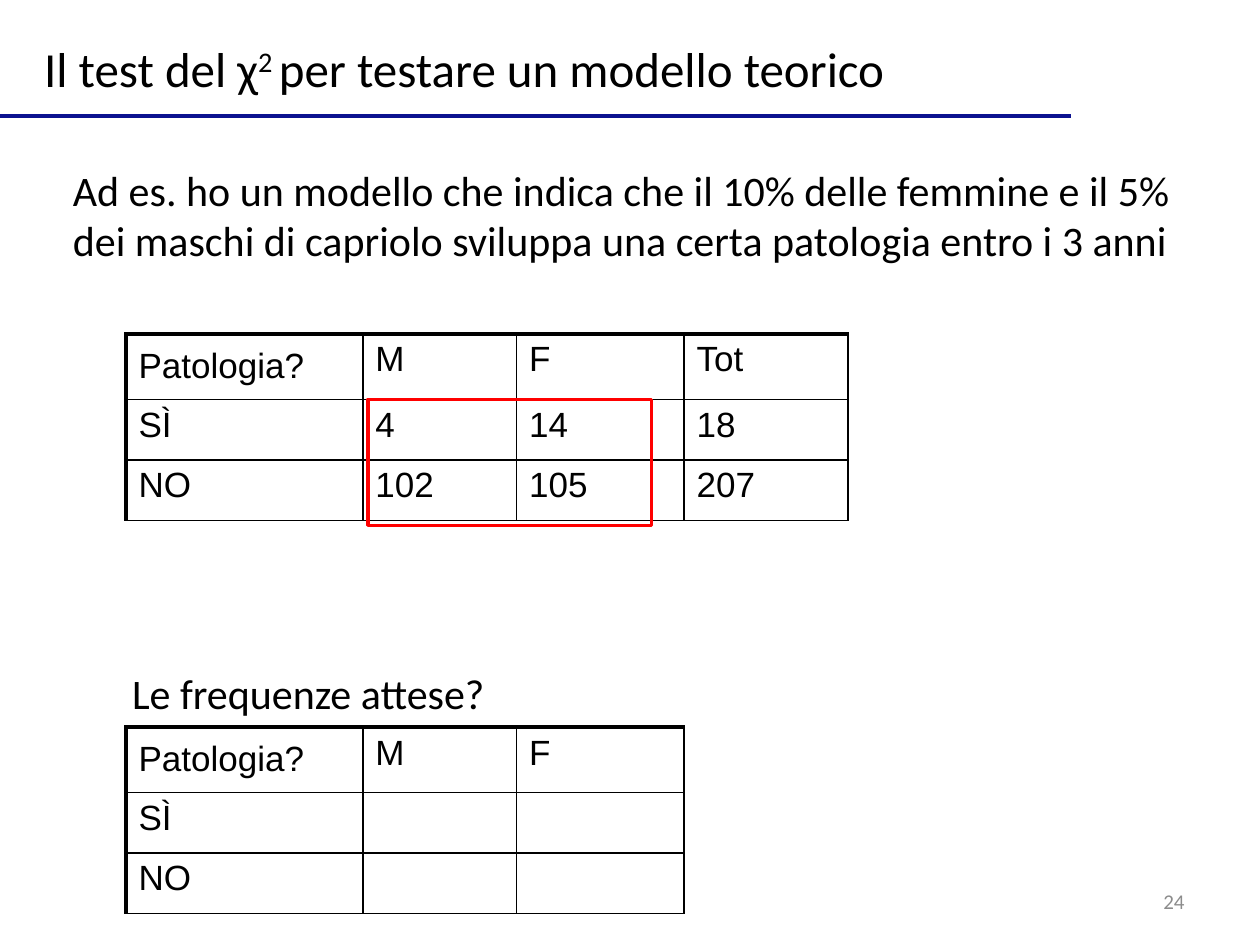
"""Build a slide on testing a theoretical model with the chi-squared test."""
from dataclasses import dataclass

from lxml import etree
from pptx import Presentation
from pptx.dml.color import RGBColor
from pptx.enum.shapes import MSO_CONNECTOR, MSO_SHAPE
from pptx.enum.text import MSO_ANCHOR, MSO_AUTO_SIZE, PP_ALIGN
from pptx.oxml.ns import qn
from pptx.util import Inches, Pt

MIDDLE, TOP = MSO_ANCHOR.MIDDLE, MSO_ANCHOR.TOP
LEFT, RIGHT = PP_ALIGN.LEFT, PP_ALIGN.RIGHT
GROW = MSO_AUTO_SIZE.SHAPE_TO_FIT_TEXT
STRAIGHT, RECTANGLE = MSO_CONNECTOR.STRAIGHT, MSO_SHAPE.RECTANGLE
TITLE_ONLY = 5
BLACK, WHITE, GREY, NAVY, RED = "000000", "FFFFFF", "8C8C8C", "0C1290", "FF0000"
THICK, THIN = 2.25, 1
COLUMN_WIDTHS = (1.88, 1.22, 1.33, 1.3)
ROW_HEIGHTS = (0.52, 0.48, 0.48)
TABLE_LEFT = 1


@dataclass
class Label:
    """A text box with its place in inches and its look."""

    text: str
    place: tuple[float, float, float, float]
    size: float = 24
    color: str = BLACK
    align: PP_ALIGN = LEFT


@dataclass
class Frequencies:
    """A contingency table with its top edge in inches."""

    top: float
    rows: list[list[str]]


LABELS = [
    Label("24", (7.17, 6.95, 2.33, 0.4), 12, GREY, RIGHT),
    Label("Ad es. ho un modello che indica che il 10% delle femmine e il 5%\n"
          "dei maschi di capriolo sviluppa una certa patologia entro i 3 anni",
          (0.48, 1.25, 8.98, 0.91)),
    Label("Le frequenze attese?", (0.95, 5.25, 3.04, 0.5)),
]
OBSERVED = Frequencies(2.65, [["Patologia?", "M", "F", "Tot"],
                              ["SÌ", "4", "14", "18"],
                              ["NO", "102", "105", "207"]])
EXPECTED = Frequencies(5.77, [["Patologia?", "M", "F"], ["SÌ", "", ""], ["NO", "", ""]])


def rgb(color: str) -> RGBColor:
    """Turn a hex string into a colour."""
    return RGBColor.from_string(color)


def style_span(span, size: float, color: str = BLACK, font: str = "Calibri") -> None:
    """Set the font of one run."""
    span.font.name, span.font.size = font, Pt(size)
    span.font.color.rgb = rgb(color)


def fit_frame(frame) -> None:
    """Centre a text frame vertically and size its box to the unwrapped text."""
    frame.word_wrap, frame.auto_size = False, GROW
    frame.vertical_anchor = MIDDLE


def add_title(page) -> None:
    """Place the title with its superscript."""
    box = page.shapes.title
    box.left, box.top, box.width, box.height = map(Inches, (0.25, 0.25, 6.97, 0.57))
    fit_frame(box.text_frame)
    para = box.text_frame.paragraphs[0]
    para.alignment = LEFT
    for text, baseline in (("Il test del χ", 0), ("2 ", 30000),
                           ("per testare un modello teorico", 0)):
        span = para.add_run()
        span.text = text
        style_span(span, 28)
        span.font._element.set("baseline", str(baseline))


def add_label(page, label: Label) -> None:
    """Draw a text box."""
    box = page.shapes.add_textbox(*map(Inches, label.place))
    frame = box.text_frame
    frame.text = label.text
    fit_frame(frame)
    if label.align == RIGHT:
        frame.word_wrap, frame.auto_size = True, MSO_AUTO_SIZE.NONE
    for para in frame.paragraphs:
        para.alignment = label.align
        style_span(para.runs[0], label.size, label.color)


def add_rule(page) -> None:
    """Draw the line under the title."""
    rule = page.shapes.add_connector(STRAIGHT, 0, Inches(0.92), Inches(8.5), Inches(0.92))
    rule.line.color.rgb, rule.line.width = rgb(NAVY), Pt(2)
    etree.SubElement(rule._element.spPr, qn("a:effectLst"))


def set_borders(cell, row: int, column: int) -> None:
    """Border a cell, thick on the outer left and top of the table."""
    left = THICK if column == 0 else THIN
    top = THICK if row == 0 else THIN
    properties = cell._tc.get_or_add_tcPr()
    for index, (side, width) in enumerate(zip("LRTB", (left, THIN, top, THIN))):
        line = etree.Element(qn(f"a:ln{side}"), w=str(Pt(width)))
        fill = etree.SubElement(line, qn("a:solidFill"))
        etree.SubElement(fill, qn("a:srgbClr"), val=BLACK)
        properties.insert(index, line)


def fill_cell(cell, text: str, row: int, column: int) -> None:
    """Write and format one table cell."""
    cell.fill.solid()
    cell.fill.fore_color.rgb = rgb(WHITE)
    set_borders(cell, row, column)
    cell.vertical_anchor = MIDDLE if row == column == 0 else TOP
    cell.text = text
    para = cell.text_frame.paragraphs[0]
    for span in para.runs:
        style_span(span, 20, font="Arial")
        space = etree.SubElement(para._p.get_or_add_pPr(), qn("a:spcBef"))
        etree.SubElement(space, qn("a:spcPct"), val="20000")


def add_frequencies(page, frequencies: Frequencies) -> None:
    """Draw a contingency table."""
    rows = frequencies.rows
    widths = COLUMN_WIDTHS[:len(rows[0])]
    table = page.shapes.add_table(
        len(rows), len(widths), Inches(TABLE_LEFT), Inches(frequencies.top),
        Inches(sum(widths)), Inches(sum(ROW_HEIGHTS))).table
    table.first_row = table.horz_banding = False
    for column, width in zip(table.columns, widths):
        column.width = Inches(width)
    for row, height in zip(table.rows, ROW_HEIGHTS):
        row.height = Inches(height)
    for row, texts in enumerate(rows):
        for column, text in enumerate(texts):
            fill_cell(table.cell(row, column), text, row, column)


def add_highlight(page) -> None:
    """Frame the observed counts in red."""
    box = page.shapes.add_shape(RECTANGLE, *map(Inches, (2.92, 3.17, 2.25, 1)))
    box.shadow.inherit = False
    box.fill.background()
    box.line.color.rgb, box.line.width = rgb(RED), Pt(2)


def main() -> None:
    """Build and save the deck."""
    deck = Presentation()
    deck.slide_width, deck.slide_height = Inches(10), Inches(7.5)
    page = deck.slides.add_slide(deck.slide_layouts[TITLE_ONLY])
    add_rule(page)
    add_title(page)
    add_frequencies(page, OBSERVED)
    add_highlight(page)
    add_frequencies(page, EXPECTED)
    for label in LABELS:
        add_label(page, label)
    deck.save("out.pptx")


if __name__ == "__main__":
    main()
